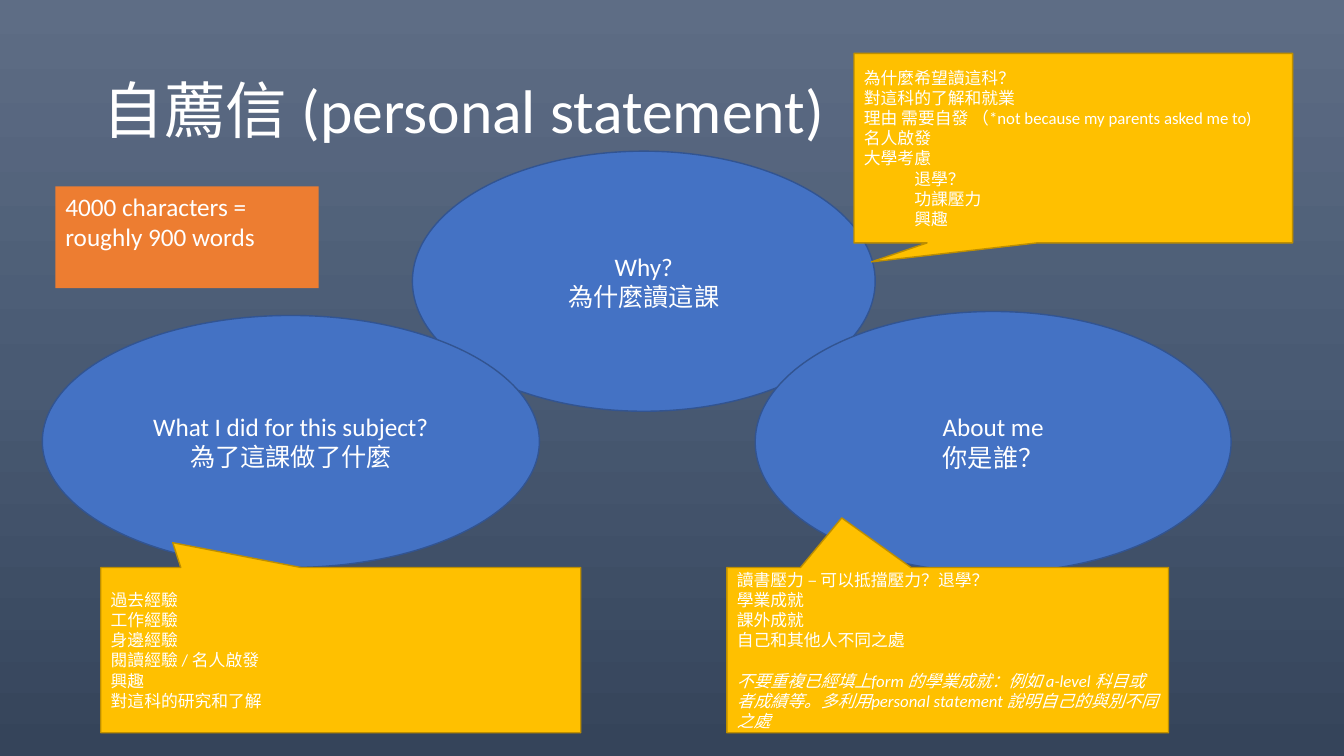
from copy import deepcopy

from pptx import Presentation
from pptx import util as u
from pptx.dml.color import RGBColor
from pptx.enum import shapes, text

COLOURS = {
    "sky": "5E6D85", "dusk": "495A73", "night": "35445A",
    "white": "FFFFFF", "orange": "ED7D31",
    "blue": "4472C4", "blue_edge": "325491",
    "gold": "FFC000", "gold_edge": "BD8E00",
}
FONT = "Calibri"

TOPICS = [
    (("Why?", "為什麼讀這課"), (4.09, 1.5, 4.59, 2.58)),
    (("What I did for this subject?", "為了這課做了什麼"), (0.42, 3.13, 4.93, 2.5)),
    (("About me", "你是誰？"), (7.49, 3.09, 4.72, 2.59)),
]
REASONS = ["為什麼希望讀這科？", "對這科的了解和就業",
           "理由 需要自發 （*not because my parents asked me to)",
           "名人啟發", "大學考慮"]
CONCERNS = ["退學？", "功課壓力", "興趣"]
EXPERIENCES = ["過去經驗", "工作經驗", "身邊經驗", "閱讀經驗 / 名人啟發",
               "興趣", "對這科的研究和了解"]
STRENGTHS = ["讀書壓力 – 可以抵擋壓力？退學？", "學業成就", "課外成就",
             "自己和其他人不同之處"]
ADVICE = ("不要重複已經填上form 的學業成就：例如 a-level 科目或者成績等。"
          "多利用personal statement 說明自己的與別不同之處")


def colour(name):
    return RGBColor.from_string(COLOURS[name])


def paint_background(page):
    """Fill the page with a three-stop gradient from top to bottom."""
    fill = page.background.fill
    fill.gradient()
    fill.gradient_angle = 270
    first = page.element.xpath(".//a:gs")[0]
    first.addnext(deepcopy(first))
    stops = [(0, "sky"), (0.5, "dusk"), (1, "night")]
    for stop, (position, name) in zip(fill.gradient_stops, stops):
        stop.position = position
        stop.color.rgb = colour(name)


def write(box, lines, size=18, align=text.PP_ALIGN.LEFT, italic=None,
          indent=0, space_before=0, line_spacing=None):
    """Append each line to the box as a paragraph."""
    frame = box.text_frame
    for line in lines:
        para = frame.add_paragraph() if frame.text else frame.paragraphs[0]
        para.alignment = align
        para.space_before = u.Pt(space_before)
        para.line_spacing = line_spacing
        if indent:
            para.level = 1
            properties = para._p.get_or_add_pPr()
            properties.set("marL", str(u.Inches(indent)))
            properties.set("indent", "0")
        span = para.add_run()
        span.text = line
        span.font.name = FONT
        span.font.size = u.Pt(size)
        span.font.italic = italic
        span.font.color.rgb = colour("white")


def add_box(page, kind, place, fill, edge=None, anchor=text.MSO_ANCHOR.MIDDLE):
    box = page.shapes.add_shape(kind, *map(u.Inches, place))
    box.shadow.inherit = False
    box.fill.solid()
    box.fill.fore_color.rgb = colour(fill)
    if edge:
        box.line.color.rgb = colour(edge)
        box.line.width = u.Pt(1)
    else:
        box.line.fill.background()
    box.text_frame.word_wrap = True
    box.text_frame.vertical_anchor = anchor
    return box


def add_title(page, title):
    box = page.shapes.add_textbox(*map(u.Inches, (0.92, 0.4, 11.5, 1.45)))
    box.text_frame.word_wrap = True
    box.text_frame.vertical_anchor = text.MSO_ANCHOR.MIDDLE
    write(box, [title], size=44, line_spacing=0.9)


def add_topic(page, lines, place):
    box = add_box(page, shapes.MSO_SHAPE.OVAL, place, "blue", "blue_edge")
    write(box, lines, align=text.PP_ALIGN.CENTER)


def add_callout(page, lines, place, tip):
    """Add a gold callout; tip is the pointer's offset from its centre."""
    box = add_box(page, shapes.MSO_SHAPE.RECTANGULAR_CALLOUT, place,
                  "gold", "gold_edge")
    box.adjustments[0], box.adjustments[1] = tip
    write(box, lines, size=12)
    return box


def main():
    deck = Presentation()
    deck.slide_width, deck.slide_height = u.Inches(13.33), u.Inches(7.5)
    page = deck.slides.add_slide(deck.slide_layouts[6])
    paint_background(page)
    add_title(page, "自薦信 (personal statement)")
    for lines, place in TOPICS:
        add_topic(page, lines, place)

    why = add_callout(page, REASONS, (8.47, 0.53, 4.35, 1.88), (-0.46, 0.6))
    write(why, CONCERNS, size=12, indent=0.5)
    add_callout(page, EXPERIENCES, (1, 5.63, 4.76, 1.64), (-0.35, -0.65))
    about = add_callout(page, STRENGTHS, (7.21, 5.63, 4.38, 1.64), (-0.24, -0.8))
    write(about, [ADVICE], size=12, italic=True, space_before=14.5)

    limit = add_box(page, shapes.MSO_SHAPE.RECTANGLE, (0.55, 1.85, 2.61, 1.01),
                    "orange", anchor=text.MSO_ANCHOR.TOP)
    write(limit, ["4000 characters = roughly 900 words"])
    deck.save("out.pptx")


if __name__ == "__main__":
    main()
